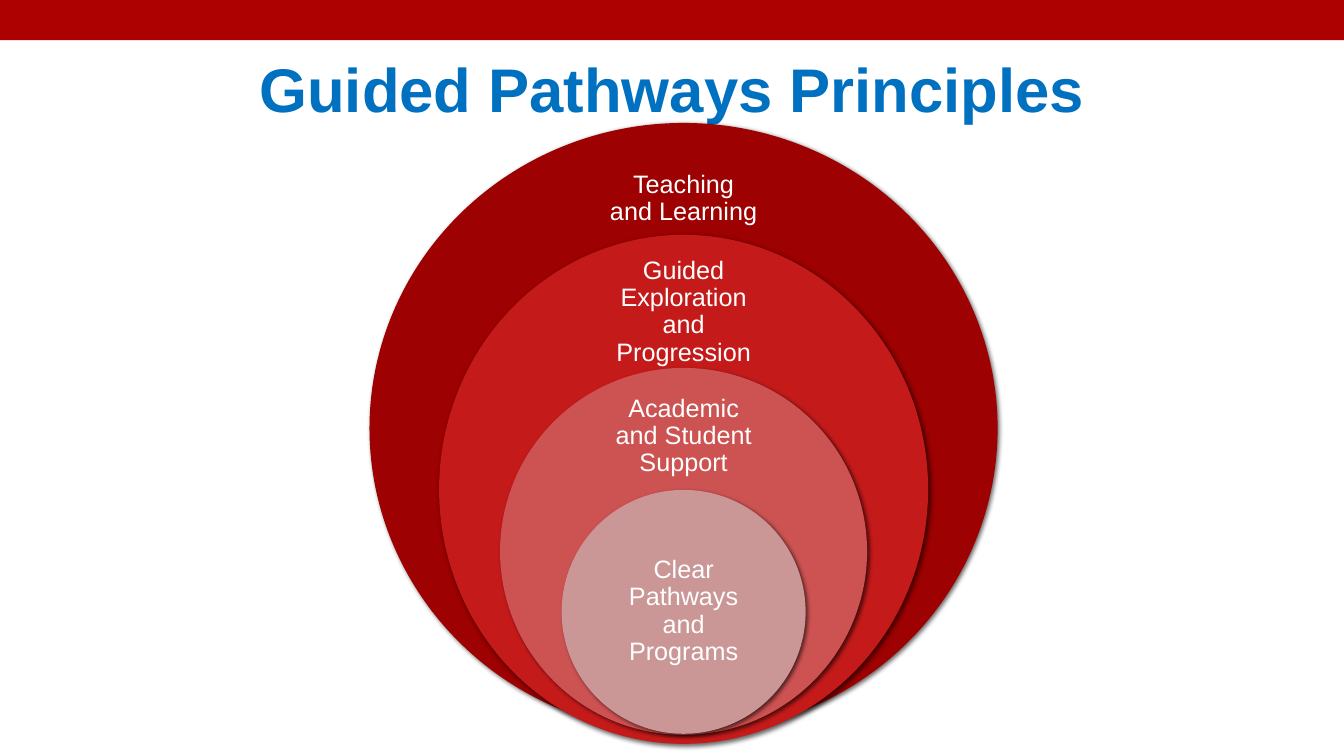
"""Build the Guided Pathways Principles slide with four nested circles."""
from lxml.etree import SubElement
from pptx import Presentation
from pptx.dml.color import RGBColor
from pptx.enum.shapes import MSO_SHAPE
from pptx.enum.text import MSO_ANCHOR, PP_ALIGN
from pptx.oxml.ns import qn
from pptx.util import Inches, Pt

BAR_RED = RGBColor(0xAD, 0x01, 0x01)
TITLE_BLUE = RGBColor(0x00, 0x70, 0xC0)
WHITE = RGBColor(0xFF, 0xFF, 0xFF)
FONT = "Arial"
SLIDE_WIDTH = 13.33
CENTRE_X = 6.78

PRINCIPLES = [
    ("Teaching and Learning", RGBColor(0x9D, 0x01, 0x01),
     (1.22, 6.23, 6.06), (1.52, 1.74, 0.91)),
    ("Guided Exploration and Progression", RGBColor(0xC5, 0x1A, 0x1A),
     (2.33, 4.85, 5.05), (2.64, 1.69, 0.91)),
    ("Academic and Student Support", RGBColor(0xCD, 0x52, 0x52),
     (3.65, 3.64, 3.64), (3.92, 1.69, 0.82)),
    ("Clear Pathways and Programs", RGBColor(0xCA, 0x96, 0x96),
     (4.86, 2.42, 2.42), (5.46, 1.71, 1.21)),
]


def centred(top, width, height):
    return [Inches(v) for v in (CENTRE_X - width / 2, top, width, height)]


class PathwaysSlide:
    def __init__(self, deck):
        self.slide = deck.slides.add_slide(deck.slide_layouts[5])
        self.shapes = self.slide.shapes

    def style(self, paragraph, size, color, bold=False):
        paragraph.alignment = PP_ALIGN.CENTER
        font = paragraph.font
        font.name, font.size, font.bold = FONT, Pt(size), bold
        font.color.rgb = color

    def filled(self, shapes, kind, bounds, color):
        shape = shapes.add_shape(kind, *bounds)
        shape.fill.solid()
        shape.fill.fore_color.rgb = color
        shape.line.fill.background()
        shape.shadow.inherit = False
        return shape

    def bar(self):
        bounds = [Inches(v) for v in (0, 0, SLIDE_WIDTH, 0.4)]
        self.filled(self.shapes, MSO_SHAPE.RECTANGLE, bounds, BAR_RED)

    def title(self, text):
        heading = self.shapes.title
        heading.left, heading.top = Inches(2.17), Inches(0.4)
        heading.width, heading.height = Inches(9), Inches(1.06)
        frame = heading.text_frame
        frame.text = text
        frame.vertical_anchor = MSO_ANCHOR.TOP
        frame.margin_top = Inches(0.11)
        self.style(frame.paragraphs[0], 44, TITLE_BLUE, bold=True)

    def circle(self, group, bounds, color):
        ring = self.filled(group.shapes, MSO_SHAPE.OVAL, bounds, color)
        effects = ring._element.spPr.find(qn("a:effectLst"))
        shadow = SubElement(effects, qn("a:outerShdw"), blurRad=str(Pt(3)),
                            dist=str(Pt(2)), dir="2700000", rotWithShape="0")
        black = SubElement(shadow, qn("a:srgbClr"), val="000000")
        SubElement(black, qn("a:alpha"), val="60000")

    def label(self, group, bounds, text):
        frame = group.shapes.add_textbox(*bounds).text_frame
        frame.word_wrap = True
        frame.vertical_anchor = MSO_ANCHOR.MIDDLE
        frame.margin_left = frame.margin_right = Inches(0.14)
        frame.margin_top = frame.margin_bottom = Inches(0.14)
        frame.text = text
        paragraph = frame.paragraphs[0]
        paragraph.line_spacing = 0.9
        self.style(paragraph, 18, WHITE)

    def nested_circles(self, principles):
        group = self.shapes.add_group_shape()
        for text, color, ring, caption in principles:
            self.circle(group, centred(*ring), color)
            self.label(group, centred(*caption), text)


def main():
    deck = Presentation()
    deck.slide_width, deck.slide_height = Inches(SLIDE_WIDTH), Inches(7.5)
    pathways = PathwaysSlide(deck)
    pathways.bar()
    pathways.title("Guided Pathways Principles")
    pathways.nested_circles(PRINCIPLES)
    deck.save("out.pptx")


if __name__ == "__main__":
    main()
